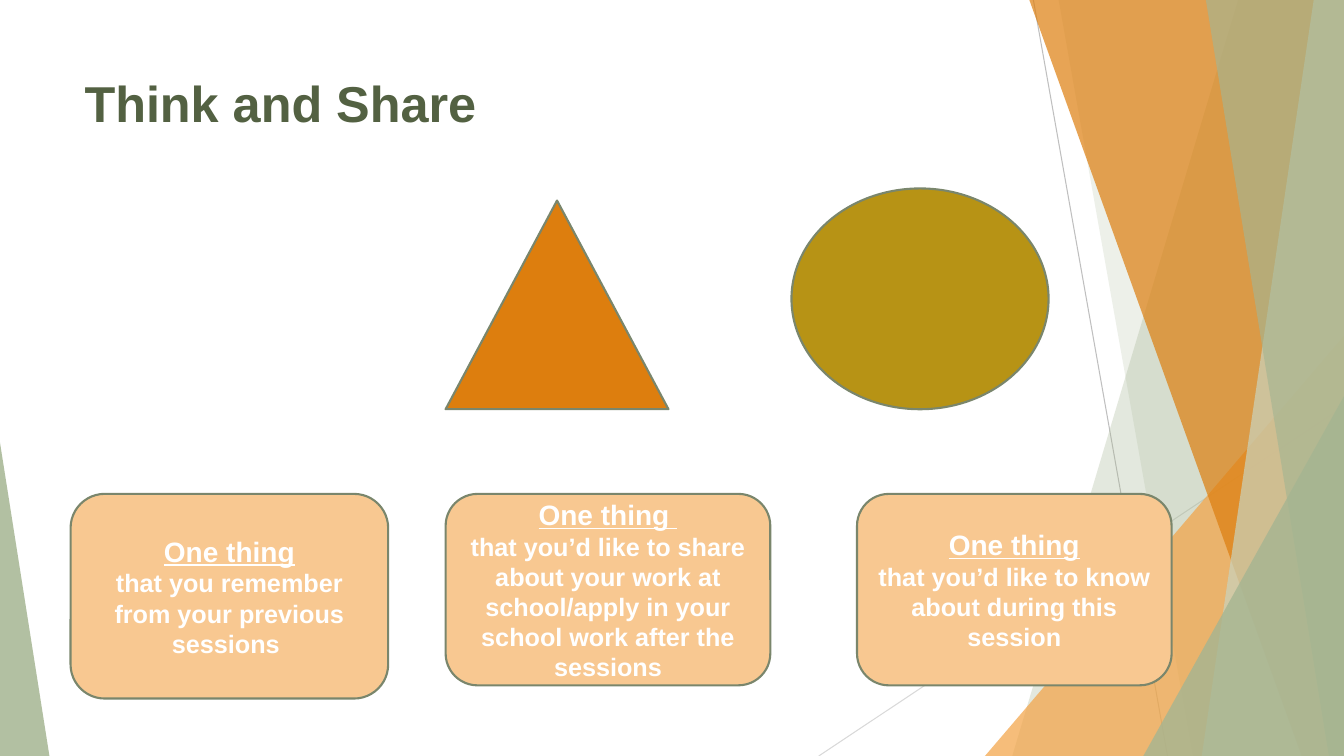
from pptx import Presentation, util as u
from pptx.dml import color
from pptx.enum import shapes, text
from pptx.oxml import ns
from lxml import etree

KIND = shapes.MSO_SHAPE
deck = Presentation()
deck.slide_width, deck.slide_height = u.Inches(13.33), u.Inches(7.5)
page = deck.slides.add_slide(deck.slide_layouts[6])

# A grid of 100 columns by 100 rows covers the slide
COL, ROW = deck.slide_width / 100, deck.slide_height / 100


def grid(*lengths):
    """Turn alternating columns and rows into slide units."""
    return [round(n * (ROW if i % 2 else COL)) for i, n in enumerate(lengths)]


def paint(shape, fill, opacity=100, line=None):
    """Fill and outline a shape with hex colours."""
    shape.shadow.inherit = False
    shape.fill.solid()
    shape.fill.fore_color.rgb = color.RGBColor.from_string(fill)
    if opacity < 100:
        tint = shape.fill._xPr.find(".//" + ns.qn("a:srgbClr"))
        etree.SubElement(tint, ns.qn("a:alpha"), val=str(opacity * 1000))
    if line:
        shape.line.color.rgb = color.RGBColor.from_string(line)
        shape.line.width = u.Pt(1.5)
    else:
        shape.line.fill.background()


# Thin background lines
for ends, tone in [((76.89, 0, 86.87, 100), "BFBFBF"),
                   ((100, 53.73, 60.92, 100), "D9D9D9")]:
    thread = page.shapes.add_connector(shapes.MSO_CONNECTOR.STRAIGHT, *grid(*ends))
    thread.line.color.rgb = color.RGBColor.from_string(tone)
    thread.line.width = u.Pt(0.75)
    etree.SubElement(thread._element.spPr, ns.qn("a:effectLst"))

# Background facets: bands give their left edge at top and bottom,
# corner triangles give left, top, width and the place of the tip
facets = [
    ("band", (92.12, 75.32), "A5B592", 30),
    ("band", (78.77, 88.75), "A5B592", 20),
    ("corner", (73.29, 44.4, 26.71, 1), "F3A447", 72),
    ("band", (76.59, 96.85), "DD7E0E", 70),
    ("band", (97.75, 89.42), "C9D3BE", 70),
    ("band", (89.72, 98.87), "A5B592", 65),
    ("corner", (85.07, 52.4, 14.93, 1), "A5B592", 80),
    ("corner", (0, 58.53, 3.68, 0), "A5B592", 85),
]
for kind, place, fill, opacity in facets:
    if kind == "band":
        top, bottom = place
        outline = page.shapes.build_freeform(*grid(top, 0))
        outline.add_line_segments(
            [grid(100, 0), grid(100, 100), grid(bottom, 100)], close=True)
        facet = outline.convert_to_shape()
    else:
        left, top, width, tip = place
        facet = page.shapes.add_shape(
            KIND.ISOSCELES_TRIANGLE, *grid(left, top, width, 100 - top))
        facet.adjustments[0] = tip
    paint(facet, fill, opacity)

# Title
title = page.shapes.add_textbox(*grid(5.55, 8.93, 70.52, 19.2))
title.text_frame.word_wrap = True
writing = [(title.text_frame.paragraphs[0], "Think and Share",
            {"size": u.Pt(36)}, "536142")]

# Triangle and circle
for kind, place, fill in [
        (KIND.ISOSCELES_TRIANGLE, (33.16, 26.53, 16.58, 27.6), "DD7E0E"),
        (KIND.FLOWCHART_CONNECTOR, (58.89, 24.93, 19.13, 29.2), "B79315")]:
    paint(page.shapes.add_shape(kind, *grid(*place)), fill, line="7A866C")

# Prompt cards
cards = [
    (5.25, 23.63, 27.07, "One thing",
     "that you remember from your previous sessions "),
    (33.16, 24.16, 25.33, "One thing ",
     "that you’d like to share about your work at school/apply in your "
     "school work after the sessions"),
    (63.77, 23.41, 25.33, "One thing",
     "that you’d like to know about during this session"),
]
for left, width, height, heading, prompt in cards:
    box = page.shapes.add_shape(
        KIND.ROUNDED_RECTANGLE, *grid(left, 65.33, width, height))
    paint(box, "F8C891", line="7A866C")
    frame = box.text_frame
    frame.word_wrap = True
    frame.vertical_anchor = text.MSO_ANCHOR.MIDDLE
    writing += [
        (frame.paragraphs[0], heading, {"size": u.Pt(20), "underline": True}, "FFFFFF"),
        (frame.add_paragraph(), prompt, {"size": u.Pt(18)}, "FFFFFF"),
    ]
    for para in frame.paragraphs:
        para.alignment = text.PP_ALIGN.CENTER

# Words of the title and the cards
for para, words, style, tone in writing:
    span = para.add_run()
    span.text = words
    span.font.color.rgb = color.RGBColor.from_string(tone)
    for name, value in {"name": "Arial", "bold": True, **style}.items():
        setattr(span.font, name, value)

deck.save("out.pptx")
